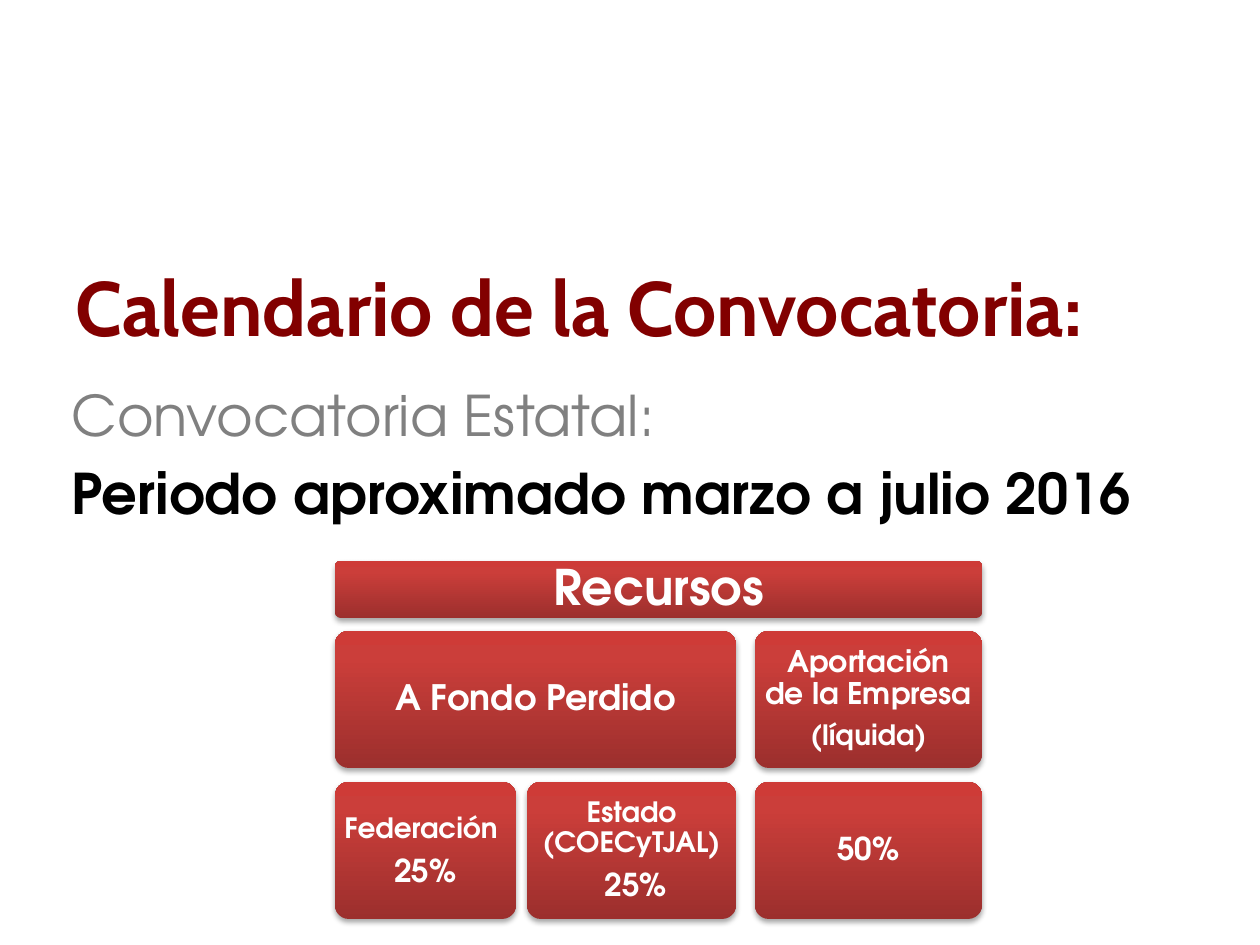
import copy
from dataclasses import dataclass

import lxml.etree
import pptx
import pptx.dml.color
import pptx.enum.shapes
import pptx.enum.text
import pptx.oxml.ns
import pptx.util

EMU_PER_PX = 914400 / 126
HEADING_FONT = "Cabin"
TEXT_FONT = "TeX Gyre Adventor"
COLORS = {
    "title": "820000",
    "muted": "808080",
    "black": "000000",
    "white": "FFFFFF",
    "red_dark": "9C2F2D",
    "red": "CB3E3A",
    "red_light": "CE3B37",
}


@dataclass
class Line:
    text: str
    size: int
    color: str = "white"
    bold: bool = True
    font: str = TEXT_FONT
    tail_size: int = 0


@dataclass
class Box:
    left: int
    top: int
    right: int
    height: int
    inset: int
    lines: list[Line]


def px(length: float) -> pptx.util.Emu:
    return pptx.util.Emu(round(length * EMU_PER_PX))


def rgb(name: str) -> pptx.dml.color.RGBColor:
    return pptx.dml.color.RGBColor.from_string(COLORS[name])


def place(shape, left: int, top: int, width: int, height: int) -> None:
    shape.left, shape.top = px(left), px(top)
    shape.width, shape.height = px(width), px(height)


def write_line(paragraph, line: Line) -> None:
    paragraph.add_run().text = line.text
    paragraph.font.name = line.font
    paragraph.font.size = pptx.util.Pt(line.size)
    paragraph.font.bold = line.bold
    paragraph.font.color.rgb = rgb(line.color)
    if line.tail_size:
        tail = paragraph.add_run()
        tail.text = " "
        tail.font.size = pptx.util.Pt(line.tail_size)


def paragraphs_for(frame, lines: list[Line]):
    for index, line in enumerate(lines):
        yield (frame.add_paragraph() if index else frame.paragraphs[0]), line


def add_child(parent, tag: str, **attributes: str):
    return lxml.etree.SubElement(parent, pptx.oxml.ns.qn(tag), attributes)


def paint_red(shape) -> None:
    shape.fill.gradient()
    shape.fill.gradient_angle = 90
    stops = shape.fill._fill._gradFill.gsLst
    stops.append(copy.deepcopy(stops[-1]))
    shades = [(0, "red_dark"), (0.8, "red"), (1, "red_light")]
    for stop, (position, color) in zip(shape.fill.gradient_stops, shades):
        stop.position = position
        stop.color.rgb = rgb(color)
    shape.line.fill.background()
    shape.shadow.inherit = False
    effects = shape._element.spPr.find(pptx.oxml.ns.qn("a:effectLst"))
    shadow = add_child(effects, "a:outerShdw", blurRad="40000", dist="23000",
                       dir="5400000", rotWithShape="0")
    tint = add_child(shadow, "a:srgbClr", val=COLORS["black"])
    add_child(tint, "a:alpha", val="35000")


def draw_box(slide, box: Box) -> None:
    shape = slide.shapes.add_shape(
        pptx.enum.shapes.MSO_SHAPE.ROUNDED_RECTANGLE,
        px(box.left), px(box.top), px(box.right - box.left), px(box.height))
    shape.adjustments[0] = 0.1
    paint_red(shape)
    frame = shape.text_frame
    frame.word_wrap = True
    frame.vertical_anchor = pptx.enum.text.MSO_ANCHOR.MIDDLE
    frame.margin_left = frame.margin_right = px(box.inset)
    frame.margin_top = frame.margin_bottom = px(box.inset)
    for paragraph, line in paragraphs_for(frame, box.lines):
        paragraph.alignment = pptx.enum.text.PP_ALIGN.CENTER
        paragraph.line_spacing = 0.9
        paragraph.space_after = pptx.util.Pt(round(line.size * 0.35))
        write_line(paragraph, line)


def fill_title(title) -> None:
    place(title, 63, 227, 1134, 158)
    title.text_frame.vertical_anchor = pptx.enum.text.MSO_ANCHOR.MIDDLE
    heading = title.text_frame.paragraphs[0]
    heading.alignment = pptx.enum.text.PP_ALIGN.LEFT
    write_line(heading, Line("Calendario de la Convocatoria:", 44, "title", font=HEADING_FONT))


def fill_schedule(schedule) -> None:
    place(schedule, 59, 374, 1134, 624)
    frame = schedule.text_frame
    frame.auto_size = pptx.enum.text.MSO_AUTO_SIZE.NONE
    lines = [
        Line("Convocatoria Estatal: ", 32, "muted", bold=False),
        Line("Periodo aproximado marzo a julio 2016", 32, "black"),
    ]
    for index, (paragraph, line) in enumerate(paragraphs_for(frame, lines)):
        paragraph.alignment = pptx.enum.text.PP_ALIGN.JUSTIFY
        paragraph.space_before = pptx.util.Pt(6 if index else 0)
        properties = paragraph._p.get_or_add_pPr()
        properties.set("marL", str(px(48)))
        properties.set("indent", str(-px(48)))
        add_child(properties, "a:buNone")
        write_line(paragraph, line)


def main() -> None:
    deck = pptx.Presentation()
    deck.slide_width, deck.slide_height = px(1260), px(945)
    slide = deck.slides.add_slide(deck.slide_layouts[1])
    fill_title(slide.shapes.title)
    fill_schedule(slide.placeholders[1])

    federal_left, state_left, company_left = 335, 527, 755
    federal_right, state_right, company_right = 516, 736, 982
    header_top, source_top, share_top = 561, 631, 782
    row_height = 137
    resources = [
        Box(federal_left, header_top, company_right, 57, 14, [Line("Recursos", 28)]),
        Box(federal_left, source_top, state_right, row_height, 6,
            [Line("A Fondo Perdido", 20)]),
        Box(federal_left, share_top, federal_right, row_height, 5,
            [Line("Federación", 16, tail_size=18), Line("25%", 18)]),
        Box(state_left, share_top, state_right, row_height, 5,
            [Line("Estado (COECyTJAL)", 16), Line(" 25%", 18)]),
        Box(company_left, source_top, company_right, row_height, 5,
            [Line("Aportación de la Empresa", 17), Line("(líquida)", 16)]),
        Box(company_left, share_top, company_right, row_height, 5, [Line("50%", 18)]),
    ]
    for box in resources:
        draw_box(slide, box)
    deck.save("out.pptx")


if __name__ == "__main__":
    main()
